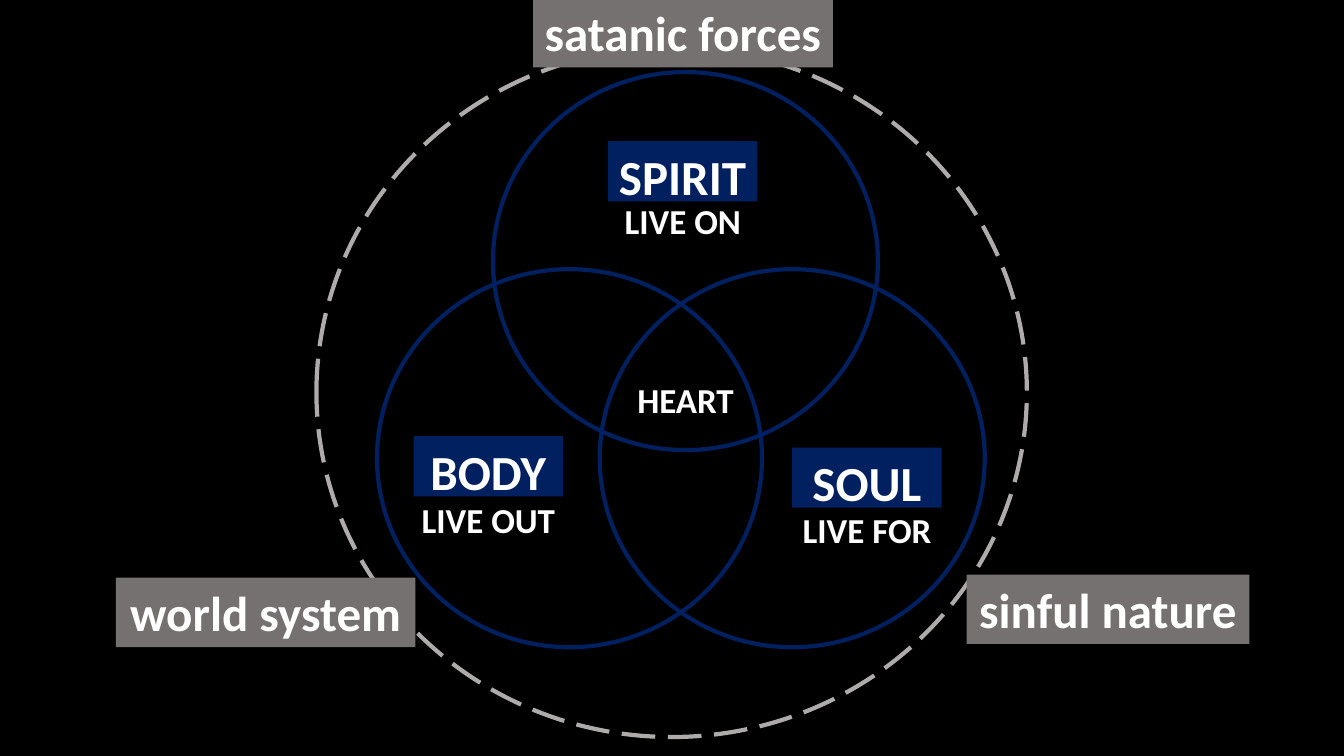
import pptx
import pptx.dml.color
import pptx.enum.dml
import pptx.enum.shapes
import pptx.enum.text
import pptx.util

RGBColor = pptx.dml.color.RGBColor
Pt = pptx.util.Pt
MSO_SHAPE = pptx.enum.shapes.MSO_SHAPE
MSO_LINE = pptx.enum.dml.MSO_LINE

BLACK = RGBColor(0x00, 0x00, 0x00)
WHITE = RGBColor(0xFF, 0xFF, 0xFF)
NAVY = RGBColor(0x00, 0x20, 0x60)
GREY = RGBColor(0x76, 0x71, 0x71)
SILVER = RGBColor(0xAF, 0xAB, 0xAB)


class Diagram:
    """Draws on one slide in a shared style; lengths are in points."""
    font = "Calibri"
    label_size = 35
    caption_size = 25
    line_width = 3

    def __init__(self, s):
        self.s = s
        s.background.fill.solid()
        s.background.fill.fore_color.rgb = BLACK

    def shape(self, kind, box):
        sp = self.s.shapes.add_shape(kind, *map(Pt, box))
        sp.shadow.inherit = False
        return sp

    def ring(self, box, color, dash=None):
        sp = self.shape(MSO_SHAPE.OVAL, box)
        sp.fill.background()
        sp.line.color.rgb = color
        sp.line.width = Pt(self.line_width)
        if dash:
            sp.line.dash_style = dash

    def label(self, text, box, color):
        sp = self.shape(MSO_SHAPE.RECTANGLE, box)
        sp.fill.solid()
        sp.fill.fore_color.rgb = color
        sp.line.fill.background()
        self.set_text(sp.text_frame, text, self.label_size)

    def caption(self, text, box):
        sp = self.s.shapes.add_textbox(*map(Pt, box))
        self.set_text(sp.text_frame, text, self.caption_size)

    def set_text(self, tf, text, size):
        tf.word_wrap = True
        tf.vertical_anchor = pptx.enum.text.MSO_ANCHOR.TOP
        p = tf.paragraphs[0]
        p.text = text
        p.alignment = pptx.enum.text.PP_ALIGN.CENTER
        p.font.name = self.font
        p.font.size = Pt(size)
        p.font.bold = True
        p.font.color.rgb = WHITE


def main():
    prs = pptx.Presentation()
    prs.slide_width, prs.slide_height = Pt(960), Pt(540)
    d = Diagram(prs.slides.add_slide(prs.slide_layouts[6]))

    d.ring((226, 34, 507.5, 492.5), SILVER, MSO_LINE.LONG_DASH)
    for text, x, y, w in (("sinful nature", 690.5, 410.4, 202),
                          ("world system", 82.8, 412.6, 214),
                          ("satanic forces", 380.9, -1.5, 214)):
        d.label(text, (x, y, w, 49.6), GREY)

    for x, y in ((269.3, 192.3), (428.4, 192.3), (352.1, 51.5)):
        d.ring((x, y, 275, 270), NAVY)
    for text, x, y in (("SOUL", 565.9, 319.7),
                       ("SPIRIT", 434.2, 100.8),
                       ("BODY", 295.4, 311.5)):
        d.label(text, (x, y, 106.8, 43), NAVY)
    for text, x, y, w in (("LIVE FOR", 497.3, 359.5, 244),
                          ("LIVE ON", 408.2, 139, 159),
                          ("LIVE OUT", 269.3, 352.5, 159),
                          ("HEART", 367.7, 266.5, 244)):
        d.caption(text, (x, y, w, 37.5))

    prs.save("out.pptx")


if __name__ == "__main__":
    main()
